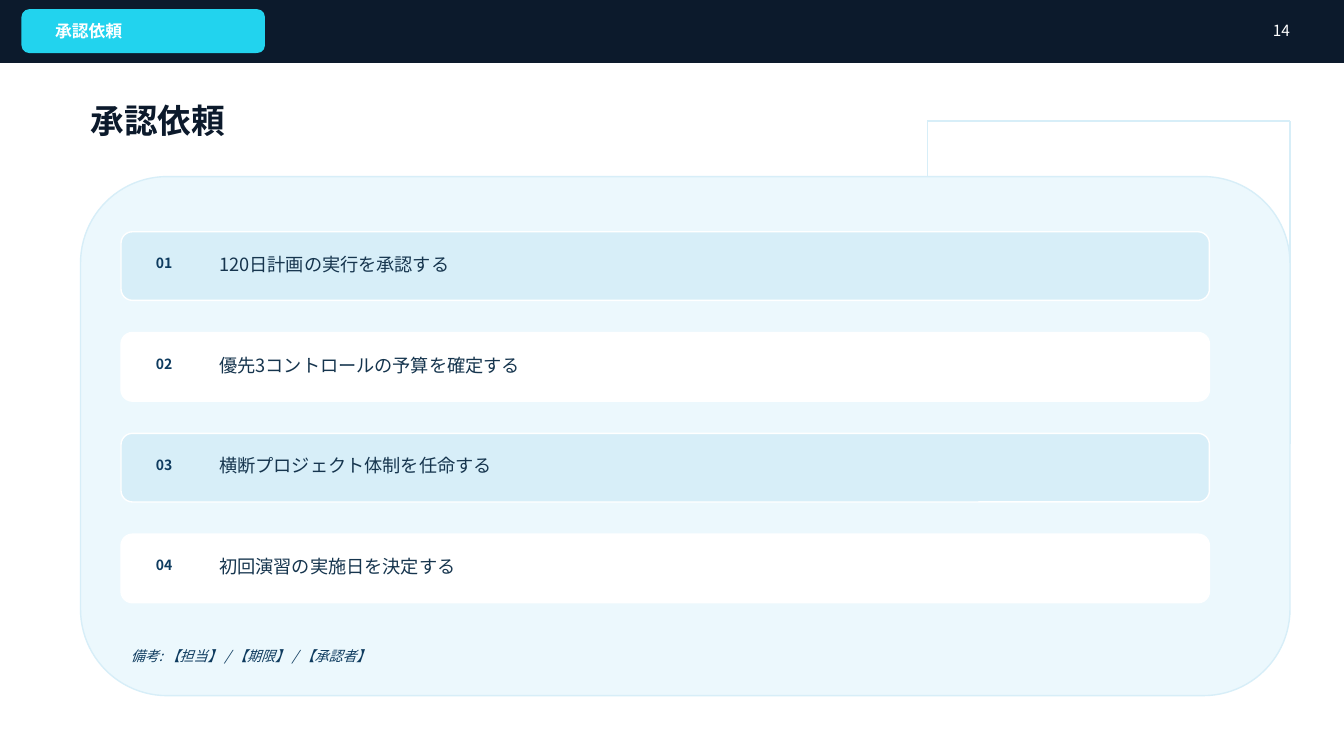
from lxml import etree
from pptx import Presentation
from pptx.dml.color import RGBColor
from pptx.enum.lang import MSO_LANGUAGE_ID
from pptx.enum.shapes import MSO_CONNECTOR, MSO_SHAPE
from pptx.enum.text import MSO_ANCHOR, MSO_AUTO_SIZE, PP_ALIGN
from pptx.oxml.ns import qn
from pptx.util import Cm, Pt

RECT = MSO_SHAPE.RECTANGLE
ROUND = MSO_SHAPE.ROUNDED_RECTANGLE
STRAIGHT = MSO_CONNECTOR.STRAIGHT
MIDDLE = MSO_ANCHOR.MIDDLE
NO_FIT = MSO_AUTO_SIZE.NONE
LEFT, RIGHT = PP_ALIGN.LEFT, PP_ALIGN.RIGHT
JAPANESE = MSO_LANGUAGE_ID.JAPANESE


def rgb(value):
    return RGBColor.from_string(value)


class Deck:
    body_font = "Noto Sans CJK JP"
    title_font = "DejaVu Sans Mono"
    navy, cyan, white = "0C1A2C", "22D3EE", "FFFFFF"
    panel, pale, blue, ink = "ECF8FD", "D7EEF8", "0E3B5F", "16354E"

    def __init__(self):
        self.prs = Presentation()
        self.prs.slide_width = Cm(33.87)
        self.prs.slide_height = Cm(19.05)
        self.s = self.prs.slides.add_slide(self.prs.slide_layouts[5])

    def line(self, x1, y1, x2, y2):
        c = self.s.shapes.add_connector(STRAIGHT, Cm(x1), Cm(y1), Cm(x2), Cm(y2))
        c.line.color.rgb = rgb(self.pale)
        c.line.width = Pt(1)
        etree.SubElement(c._element.spPr, qn("a:effectLst"))

    def box(self, kind, x, y, w, h, fill, line):
        sp = self.s.shapes.add_shape(kind, Cm(x), Cm(y), Cm(w), Cm(h))
        sp.shadow.inherit = False
        sp.fill.solid()
        sp.fill.fore_color.rgb = rgb(fill)
        sp.line.color.rgb = rgb(line)
        sp.line.width = Pt(1)

    def set_text(self, sp, text, size, color, font, bold=False, italic=False, align=LEFT):
        tf = sp.text_frame
        tf.text = text
        tf.word_wrap = True
        tf.auto_size = NO_FIT
        tf.vertical_anchor = MIDDLE
        p = tf.paragraphs[0]
        p.alignment = align
        f = p.runs[0].font
        f.size, f.bold, f.italic, f.name = Pt(size), bold, italic, font
        f.color.rgb = rgb(color)
        f.language_id = JAPANESE
        ea = etree.SubElement(f._element, qn("a:ea"))
        ea.set("typeface", font)

    def text(self, x, y, w, h, text, size, color, **style):
        sp = self.s.shapes.add_textbox(Cm(x), Cm(y), Cm(w), Cm(h))
        self.set_text(sp, text, size, color, self.body_font, **style)

    def title(self, x, y, w, h, text):
        sp = self.s.shapes.title
        sp.left, sp.top, sp.width, sp.height = Cm(x), Cm(y), Cm(w), Cm(h)
        self.set_text(sp, text, 24, self.navy, self.title_font, bold=True)

    def request(self, index, text):
        y = 5.84 + 2.54 * index
        fill = self.white if index % 2 else self.pale
        self.box(ROUND, 3.05, y, 27.43, 1.73, fill, self.white)
        self.text(3.68, y + 0.53, 1.12, 0.51, f"{index + 1:02}", 10, self.blue, bold=True)
        self.text(5.28, y + 0.51, 24.38, 0.61, text, 13, self.ink)


def main():
    d = Deck()
    d.title(2.03, 2.41, 28.96, 1.22, "承認依頼")

    left, right, top, bottom = 23.37, 32.51, 3.05, 11.18
    d.line(left, top, right, top)
    for x in (left, right):
        d.line(x, top, x, bottom)

    d.box(RECT, 0, 0, 33.87, 1.57, d.navy, d.navy)
    d.box(ROUND, 0.56, 0.25, 6.1, 1.07, d.cyan, d.cyan)
    d.text(1.14, 0.46, 22.35, 0.61, "承認依頼", 12, d.white, bold=True)
    d.text(30.86, 0.46, 1.9, 0.61, "14", 11, d.white, align=RIGHT)

    d.box(ROUND, 2.03, 4.45, 30.48, 13.08, d.panel, d.pale)
    requests = (
        "120日計画の実行を承認する",
        "優先3コントロールの予算を確定する",
        "横断プロジェクト体制を任命する",
        "初回演習の実施日を決定する",
    )
    for i, request in enumerate(requests):
        d.request(i, request)
    d.text(3.05, 16.26, 17.27, 0.56, "備考: 【担当】 / 【期限】 / 【承認者】", 10, d.blue, italic=True)

    d.prs.save("out.pptx")


if __name__ == "__main__":
    main()
